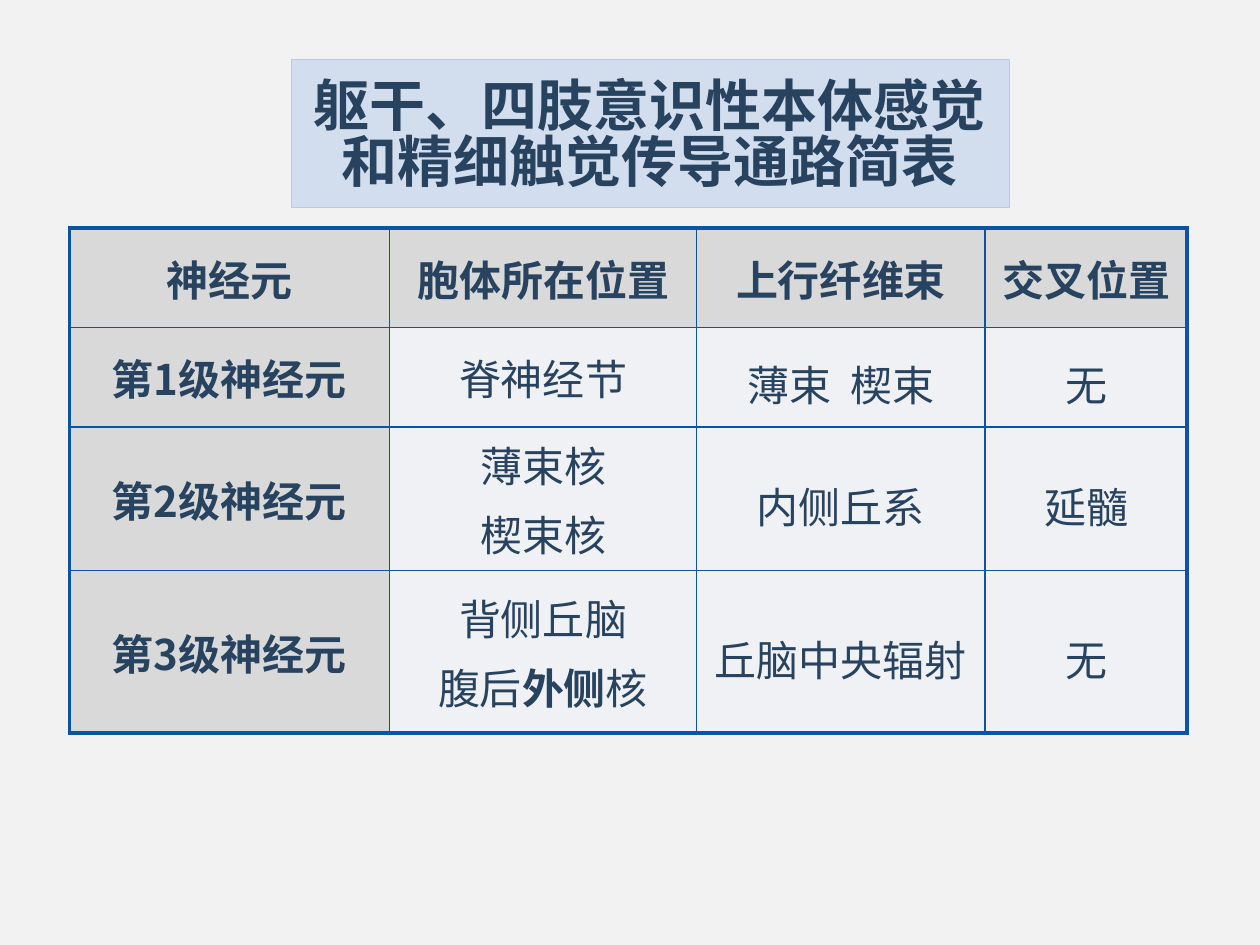
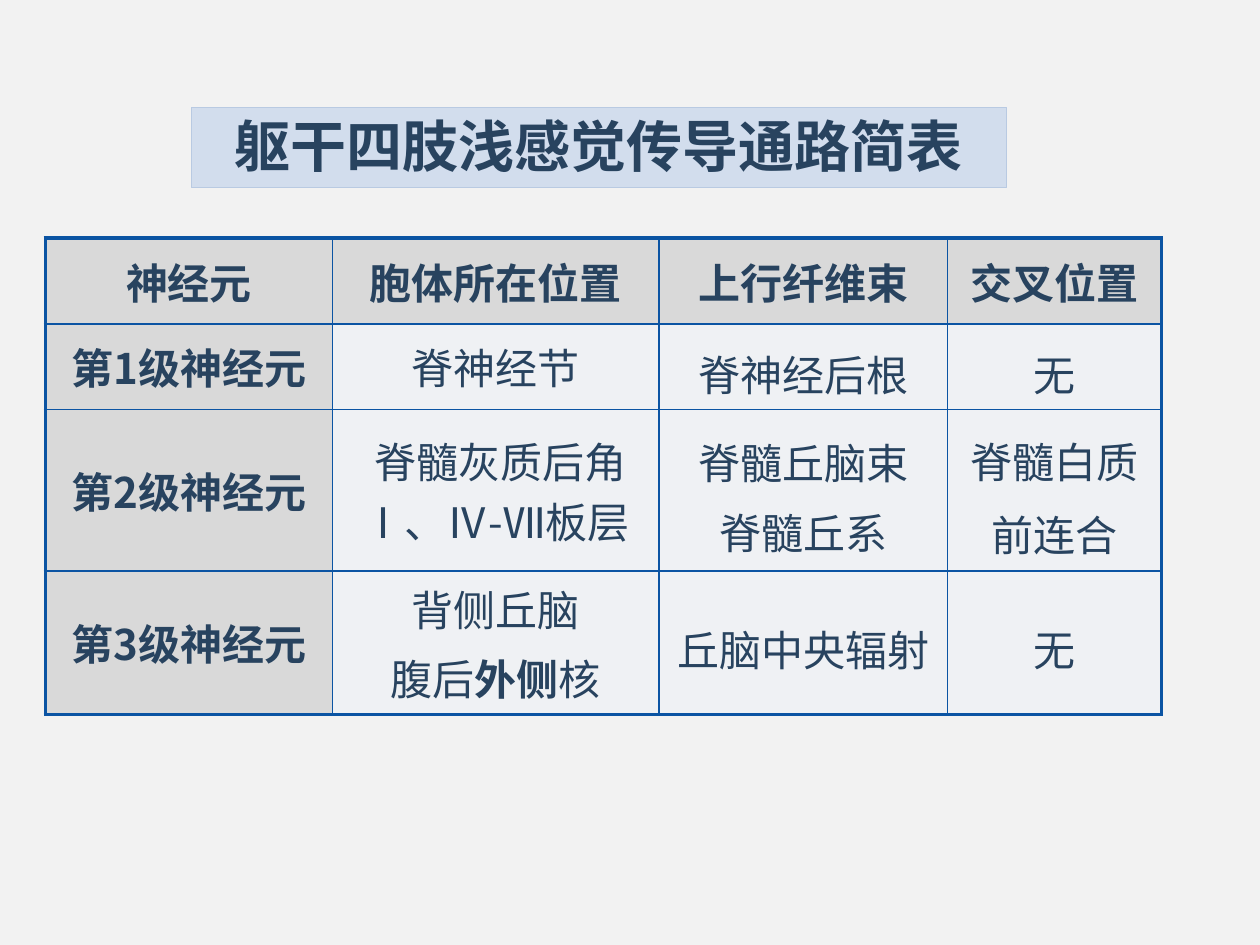
import pptx
import pptx.dml.color
import pptx.enum.shapes
import pptx.enum.text
import pptx.oxml
import pptx.oxml.ns
import pptx.util
from pptx.util import Inches, Pt

RGB = pptx.dml.color.RGBColor
BACKGROUND = RGB(0xF2, 0xF2, 0xF2)
INK = RGB(0x28, 0x43, 0x5F)
HEADING_FILL = RGB(0xD9, 0xD9, 0xD9)
BODY_FILL = RGB(0xEF, 0xF1, 0xF4)
BANNER_TOP = RGB(0xD2, 0xDD, 0xED)
BANNER_BOTTOM = RGB(0xD0, 0xDC, 0xED)
BANNER_EDGE = RGB(0xB9, 0xCA, 0xE2)
GRID = RGB(0x0B, 0x54, 0xA3)
FONT = "Noto Sans CJK SC"
OUTER_LINE, INNER_LINE = Pt(2.25), Pt(1)

HEADINGS = ["神经元", "胞体所在位置", "上行纤维束", "交叉位置"]
THIRD_NEURON = ["背侧丘脑\n腹后*外侧*核", "丘脑中央辐射", "无"]

# Each row holds cell body, tract and crossing; a new line starts a paragraph,
# and asterisks enclose bold words. Lengths are inches.
PATHWAYS = [
    {
        "title": "躯干、四肢意识性本体感觉和精细触觉传导通路简表",
        "banner": (2.31, 0.47, 5.7, 1.18),
        "corner": (0.55, 1.81),
        "columns": [2.54, 2.44, 2.29, 1.6],
        "rows": [0.79, 0.79, 1.14, 1.29],
        "neurons": [
            ["脊神经节", "薄束  楔束", "无"],
            ["薄束核\n楔束核", "内侧丘系", "延髓"],
            THIRD_NEURON,
        ],
    },
    {
        "title": "躯干四肢浅感觉传导通路简表",
        "banner": (1.52, 0.85, 6.47, 0.64),
        "corner": (0.36, 1.89),
        "columns": [2.28, 2.59, 2.29, 1.7],
        "rows": [0.68, 0.68, 1.28, 1.14],
        "neurons": [
            ["脊神经节", "脊神经后根", "无"],
            [" 脊髓灰质后角Ⅰ、Ⅳ-Ⅶ板层", "脊髓丘脑束\n脊髓丘系", "脊髓白质前连合"],
            THIRD_NEURON,
        ],
    },
]


def style_paragraph(paragraph, size, bold):
    paragraph.alignment = pptx.enum.text.PP_ALIGN.CENTER
    font = paragraph.font
    font.size, font.bold, font.name = Pt(size), bold, FONT
    font.color.rgb = INK
    east_asian = pptx.oxml.parse_xml(
        f'<a:ea {pptx.oxml.ns.nsdecls("a")} typeface="{FONT}"/>')
    paragraph.font._element.find(pptx.oxml.ns.qn("a:latin")).addnext(east_asian)


def add_banner(slide, title, place):
    banner = slide.shapes.add_shape(
        pptx.enum.shapes.MSO_SHAPE.RECTANGLE, *map(Inches, place))
    banner.shadow.inherit = False
    banner.fill.gradient()
    banner.fill.gradient_angle = 270
    for stop, color in zip(banner.fill.gradient_stops, (BANNER_TOP, BANNER_BOTTOM)):
        stop.color.rgb = color
    banner.line.color.rgb = BANNER_EDGE
    banner.line.width = Pt(0.5)
    frame = banner.text_frame
    frame.word_wrap = True
    frame.vertical_anchor = pptx.enum.text.MSO_ANCHOR.MIDDLE
    frame.margin_top, frame.margin_bottom = Inches(0.08), Inches(0.02)
    frame.text = title
    frame.paragraphs[0].line_spacing = 0.83
    style_paragraph(frame.paragraphs[0], 32, True)


def draw_borders(cell, outer_sides):
    properties = cell._tc.get_or_add_tcPr()
    for side in "LRTB":
        width = OUTER_LINE if side in outer_sides else INNER_LINE
        properties.append(pptx.oxml.parse_xml(
            f'<a:ln{side} {pptx.oxml.ns.nsdecls("a")} w="{width}"><a:solidFill>'
            f'<a:srgbClr val="{GRID}"/></a:solidFill></a:ln{side}>'))


def fill_cell(cell, text, heading, loose):
    cell.fill.solid()
    cell.fill.fore_color.rgb = HEADING_FILL if heading else BODY_FILL
    cell.vertical_anchor = pptx.enum.text.MSO_ANCHOR.MIDDLE
    for number, line in enumerate(text.split("\n")):
        frame = cell.text_frame
        paragraph = frame.add_paragraph() if number else frame.paragraphs[0]
        if number:
            paragraph.space_before = Pt(4.8)
        elif loose:
            paragraph.line_spacing = 1.2
        style_paragraph(paragraph, 24, heading)
        for part, words in enumerate(line.split("*")):
            run = paragraph.add_run()
            run.text = words
            if part % 2:
                run.font.bold = True


def add_pathway_table(slide, pathway):
    columns, rows = pathway["columns"], pathway["rows"]
    grid = [HEADINGS] + [
        [f"第{level}级神经元", *details]
        for level, details in enumerate(pathway["neurons"], 1)]
    size = (sum(columns), sum(rows))
    table = slide.shapes.add_table(
        len(rows), len(columns), *map(Inches, pathway["corner"] + size)).table
    table.first_row = table.horz_banding = False
    for column, width in zip(table.columns, columns):
        column.width = Inches(width)
    for row, height in zip(table.rows, rows):
        row.height = Inches(height)
    last_row, last_column = len(rows) - 1, len(columns) - 1
    for r, texts in enumerate(grid):
        for c, text in enumerate(texts):
            edges = {"L": c == 0, "R": c == last_column,
                     "T": r == 0, "B": r == last_row}
            cell = table.cell(r, c)
            draw_borders(cell, [side for side, outer in edges.items() if outer])
            heading = r == 0 or c == 0
            fill_cell(cell, text, heading, loose=not heading and c >= 2)


def main():
    deck = pptx.Presentation()
    deck.slide_width, deck.slide_height = Inches(10), Inches(7.5)
    for pathway in PATHWAYS:
        slide = deck.slides.add_slide(deck.slide_layouts[6])
        slide.background.fill.solid()
        slide.background.fill.fore_color.rgb = BACKGROUND
        add_pathway_table(slide, pathway)
        add_banner(slide, pathway["title"], pathway["banner"])
    deck.save("out.pptx")


if __name__ == "__main__":
    main()
